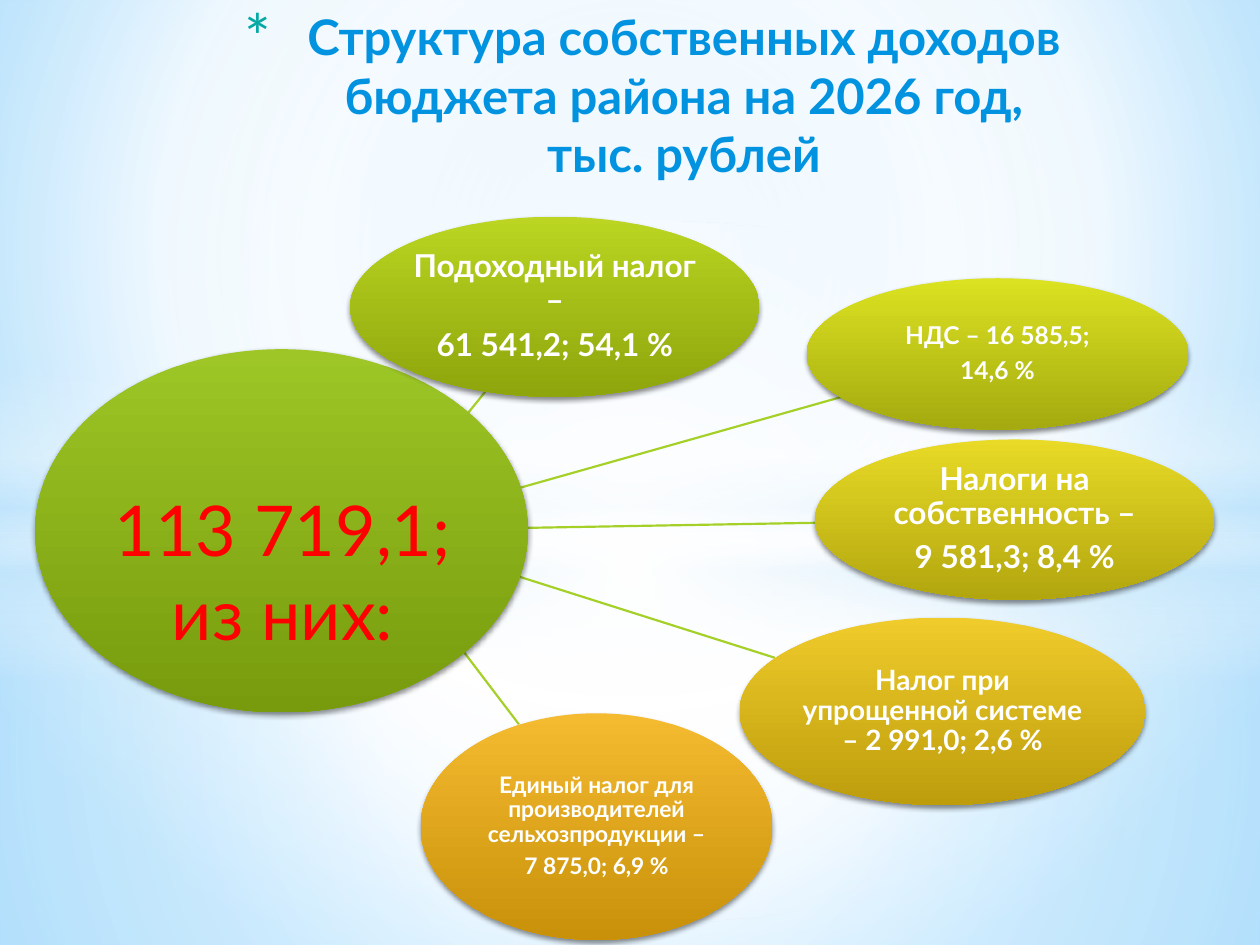
from lxml import etree
from pptx import Presentation
from pptx import util as u
from pptx.dml.color import RGBColor
from pptx.enum import shapes, text
from pptx.oxml import ns, parse_xml

FONT = "Lato"
TITLE_BLUE = RGBColor(0x02, 0x93, 0xE0)
BULLET_TEAL = RGBColor(0x04, 0xA8, 0xA4)
LINE_GREEN = RGBColor(0xA5, 0xD0, 0x28)
TOTAL_RED = RGBColor(0xFF, 0x00, 0x00)
WHITE = RGBColor(0xFF, 0xFF, 0xFF)
PALE = RGBColor(0xC6, 0xE7, 0xFC)
SKY = RGBColor(0xB0, 0xE0, 0xFF)
DEEP_SKY = RGBColor(0x6B, 0xC5, 0xFF)

TITLE = ["Структура собственных доходов", "бюджета района на 2026 год,", "тыс. рублей"]
TITLE_AREA = (1.3, 0, 23.19, 4.98)
TOTAL = ["113 719,1;", "из них:"]
TOTAL_AREA = (1.7, 9.68, 8, 3.68)
HUB = ((0.71, 7.04, 9.93, 7.32), RGBColor(0x9D, 0xC6, 0x26), RGBColor(0x77, 0x9B, 0x0D))

INCOMES = [
    ((7.06, 4.37, 8.25, 3.63), RGBColor(0xBB, 0xD5, 0x22), RGBColor(0x8E, 0xA5, 0x0C), 18,
     ["Подоходный налог –", "61 541,2; 54,1 %"]),
    ((16.26, 5.61, 7.7, 3.05), RGBColor(0xDB, 0xE2, 0x21), RGBColor(0xA4, 0xAA, 0x0F), 14,
     ["НДС – 16 585,5;", "14,6 %"]),
    ((16.43, 8.86, 8.05, 3.23), RGBColor(0xE8, 0xDA, 0x26), RGBColor(0xB2, 0xA6, 0x0F), 18,
     ["Налоги на собственность –", "9 581,3; 8,4 %"]),
    ((14.91, 12.45, 8.18, 3.78), RGBColor(0xEF, 0xCB, 0x2B), RGBColor(0xBD, 0x9D, 0x0C), 16,
     ["Налог при упрощенной системе – 2 991,0; 2,6 %"]),
    ((8.48, 14.38, 7.09, 4.57), RGBColor(0xF4, 0xBB, 0x31), RGBColor(0xC9, 0x91, 0x09), 13,
     ["Единый налог для производителей сельхозпродукции –", "7 875,0; 6,9 %"]),
]
SPOKES = [
    (8.61, 12.17, 10.46, 14.6),
    (8.97, 11.15, 15.62, 13.26),
    (8.97, 10.67, 16.43, 10.54),
    (8.97, 10.26, 16.97, 8),
    (8.71, 9.22, 9.78, 7.9),
]

CENTRE = (50, 50, 50, 50)
RECTANGLE = shapes.MSO_SHAPE.RECTANGLE
OVAL = shapes.MSO_SHAPE.OVAL
BACKGROUND = [(0, SKY, 100), (60, WHITE, 100), (100, DEEP_SKY, 100)]
BACKDROPS = [
    (RECTANGLE, (0, 10.74, 25.4, 8.31), CENTRE,
     [(0, WHITE, 91), (37, WHITE, 76), (100, PALE, 79)]),
    (RECTANGLE, (0, 0, 25.4, 10.74), CENTRE,
     [(0, WHITE, 89), (48, WHITE, 62), (100, PALE, 79)]),
    (RECTANGLE, (0, 7.37, 25.4, 6.35), None,
     [(0, WHITE, 0), (29, WHITE, 30), (45, PALE, 40), (55, WHITE, 26), (65, PALE, 60), (100, WHITE, 0)]),
    (OVAL, (0, 4.45, 25.4, 14.17), CENTRE, [(0, WHITE, 100), (54, WHITE, 0)]),
]


def cm(values):
    return [u.Cm(value) for value in values]


def set_gradient(fill, element, stops, focus=None):
    fill.gradient()
    old = element.find(".//" + ns.qn("a:gradFill"))
    colours = "".join(
        f'<a:gs pos="{place * 1000}"><a:srgbClr val="{colour}">'
        f'<a:alpha val="{alpha * 1000}"/></a:srgbClr></a:gs>'
        for place, colour, alpha in stops)
    if focus:
        sides = " ".join(f'{side}="{value * 1000}"' for side, value in zip("ltrb", focus))
        direction = f'<a:path path="circle"><a:fillToRect {sides}/></a:path>'
    else:
        direction = '<a:lin ang="5400000" scaled="0"/>'
    new = parse_xml(f'<a:gradFill {ns.nsdecls("a")} rotWithShape="1">'
                    f'<a:gsLst>{colours}</a:gsLst>{direction}</a:gradFill>')
    old.getparent().replace(old, new)


def add_gradient_shape(page, kind, area, stops, focus=None):
    shape = page.shapes.add_shape(kind, *cm(area))
    shape.shadow.inherit = False
    shape.line.fill.background()
    set_gradient(shape.fill, shape.element.spPr, stops, focus)
    return shape


def add_bubble(page, area, top, bottom):
    bubble = add_gradient_shape(page, OVAL, area, [(0, top, 100), (100, bottom, 100)])
    effects = bubble.element.spPr.find(ns.qn("a:effectLst"))
    effects.append(parse_xml(
        f'<a:outerShdw {ns.nsdecls("a")} blurRad="{u.Pt(3.1)}" dist="{u.Pt(1.8)}" dir="5400000" '
        'rotWithShape="0"><a:srgbClr val="000000"><a:alpha val="45000"/></a:srgbClr></a:outerShdw>'))
    return bubble


def style(font, size, colour, bold):
    font.name, font.size, font.bold = FONT, u.Pt(size), bold
    font.color.rgb = colour


def write(frame, lines, size, colour, bold=False):
    frame.word_wrap = True
    for number, line in enumerate(lines):
        para = frame.add_paragraph() if number else frame.paragraphs[0]
        para.alignment = text.PP_ALIGN.CENTER
        span = para.add_run()
        span.text = line
        style(span.font, size, colour, bold)


def write_title(title):
    title.left, title.top, title.width, title.height = cm(TITLE_AREA)
    frame = title.text_frame
    frame.word_wrap = True
    frame.auto_size = text.MSO_AUTO_SIZE.NONE
    frame.vertical_anchor = text.MSO_ANCHOR.TOP
    para = frame.paragraphs[0]
    para.alignment = text.PP_ALIGN.CENTER
    props = para._p.get_or_add_pPr()
    props.set("marL", str(u.Cm(1.78)))
    props.set("indent", str(u.Cm(-1.27)))
    colour = etree.SubElement(props, ns.qn("a:buClr"))
    etree.SubElement(colour, ns.qn("a:srgbClr"), val=str(BULLET_TEAL))
    etree.SubElement(props, ns.qn("a:buSzPct"), val="128000")
    etree.SubElement(props, ns.qn("a:buFont"), typeface=FONT)
    etree.SubElement(props, ns.qn("a:buChar"), char="*")
    for number, line in enumerate(TITLE):
        if number:
            para.add_line_break()
        span = para.add_run()
        span.text = line
        style(span.font, 28, TITLE_BLUE, True)


def main():
    deck = Presentation()
    deck.slide_width, deck.slide_height = cm((25.4, 19.05))
    page = deck.slides.add_slide(deck.slide_layouts[0])
    subtitle = page.placeholders[1].element
    subtitle.getparent().remove(subtitle)
    set_gradient(page.background.fill, page.element, BACKGROUND, (20, 10, 20, 60))

    for kind, area, focus, stops in BACKDROPS:
        add_gradient_shape(page, kind, area, stops, focus)

    title = page.shapes.title
    title.element.getparent().append(title.element)
    write_title(title)

    for ends in SPOKES:
        spoke = page.shapes.add_connector(shapes.MSO_CONNECTOR.STRAIGHT, *cm(ends))
        spoke.line.color.rgb = LINE_GREEN
        spoke.line.width = u.Pt(1.25)
        etree.SubElement(spoke.element.spPr, ns.qn("a:effectLst"))

    add_bubble(page, *HUB)
    for area, top, bottom, size, lines in INCOMES:
        frame = add_bubble(page, area, top, bottom).text_frame
        frame.margin_left = frame.margin_right = frame.margin_top = frame.margin_bottom = u.Cm(0.03)
        frame.vertical_anchor = text.MSO_ANCHOR.MIDDLE
        write(frame, lines, size, WHITE, True)
        for para in frame.paragraphs:
            para.line_spacing = 0.9
            para.space_after = u.Pt(round(size * 0.33, 1))

    box = page.shapes.add_textbox(*cm(TOTAL_AREA))
    write(box.text_frame, TOTAL, 40, TOTAL_RED)
    deck.save("out.pptx")


if __name__ == "__main__":
    main()
